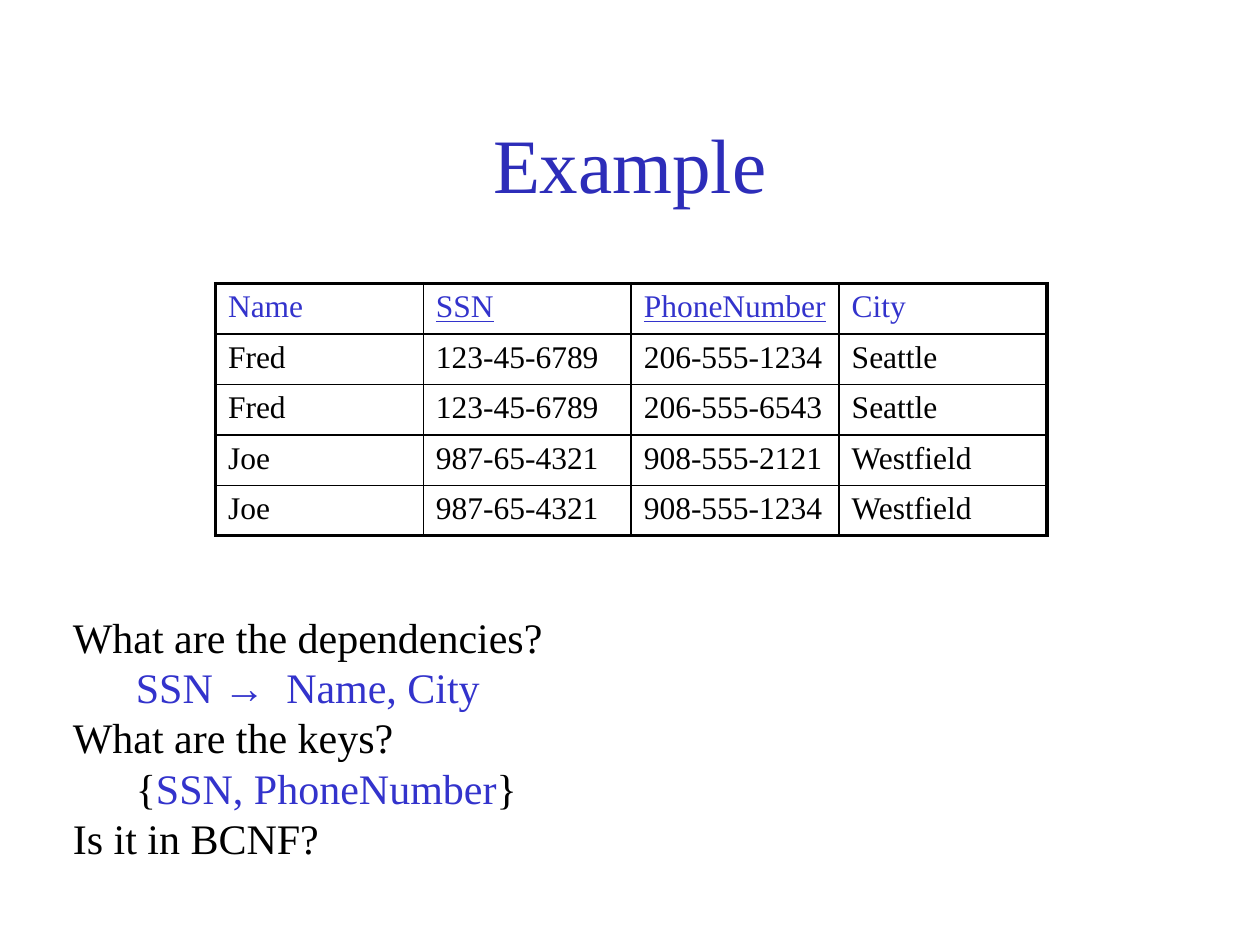
import pptx
import pptx.util
import pptx.dml.color
import pptx.enum.text
import pptx.oxml.ns
from lxml import etree

Inches = pptx.util.Inches
Pt = pptx.util.Pt

theme = {
    "font": "Times New Roman",
    "title": "2D2DB9", "accent": "3333CC", "ink": "000000",
    "title_pt": 44, "body_pt": 24, "cell_pt": 18,
    "thin": 1, "thick": 2.25,
}


def add_run(para, text, size, color, under=None):
    run = para.add_run()
    run.text = text
    run.font.name = theme["font"]
    run.font.size = Pt(theme[size])
    run.font.color.rgb = pptx.dml.color.RGBColor.from_string(theme[color])
    run.font.underline = under


def add_edge(cell, side, width):
    qn = pptx.oxml.ns.qn
    props = cell._tc.get_or_add_tcPr()
    line = etree.SubElement(props, qn("a:ln" + side), w=str(Pt(theme[width])))
    fill = etree.SubElement(line, qn("a:solidFill"))
    etree.SubElement(fill, qn("a:srgbClr"), val=theme["ink"])


deck = pptx.Presentation()
deck.slide_width, deck.slide_height = Inches(10), Inches(7.5)
slide = deck.slides.add_slide(deck.slide_layouts[5])

# Title
title = slide.shapes.title
title.left, title.top = Inches(0.75), Inches(0.67)
title.width, title.height = Inches(8.5), Inches(1.25)
frame = title.text_frame
frame.vertical_anchor = pptx.enum.text.MSO_ANCHOR.MIDDLE
frame.paragraphs[0].alignment = pptx.enum.text.PP_ALIGN.CENTER
add_run(frame.paragraphs[0], "Example", "title_pt", "title")

# Questions and answers
box = slide.shapes.add_textbox(Inches(0.48), Inches(4.8), Inches(4.27), Inches(2.12))
frame = box.text_frame
frame.word_wrap = False
frame.auto_size = pptx.enum.text.MSO_AUTO_SIZE.SHAPE_TO_FIT_TEXT
lines = [
    [("What are the dependencies?", "ink")],
    [("\t", "ink"), ("SSN →  Name, City", "accent")],
    [("What are the keys?", "ink")],
    [("\t{", "ink"), ("SSN, PhoneNumber", "accent"), ("}", "ink")],
    [("Is it in BCNF?", "ink")],
]
for i, line in enumerate(lines):
    para = frame.add_paragraph() if i else frame.paragraphs[0]
    for text, color in line:
        add_run(para, text, "body_pt", color)

# Table of people, with key columns underlined
people = [
    ["Name", "SSN", "PhoneNumber", "City"],
    ["Fred", "123-45-6789", "206-555-1234", "Seattle"],
    ["Fred", "123-45-6789", "206-555-6543", "Seattle"],
    ["Joe", "987-65-4321", "908-555-2121", "Westfield"],
    ["Joe", "987-65-4321", "908-555-1234", "Westfield"],
]
keys = ["SSN", "PhoneNumber"]
rows, cols = len(people), len(people[0])
table = slide.shapes.add_table(rows, cols, Inches(1.71), Inches(2.25),
                               Inches(1.65 * cols), Inches(0.4 * rows)).table
table.first_row = table.horz_banding = False
for r, person in enumerate(people):
    for c, text in enumerate(person):
        cell = table.cell(r, c)
        color = "ink" if r else "accent"
        add_run(cell.text_frame.paragraphs[0], text, "cell_pt", color,
                True if text in keys else None)
        # Thick frame outside, thin rules inside
        outer = {"L": c == 0, "R": c == cols - 1, "T": r == 0, "B": r == rows - 1}
        for side, edge in outer.items():
            add_edge(cell, side, "thick" if edge else "thin")
        cell.fill.background()

deck.save("out.pptx")
